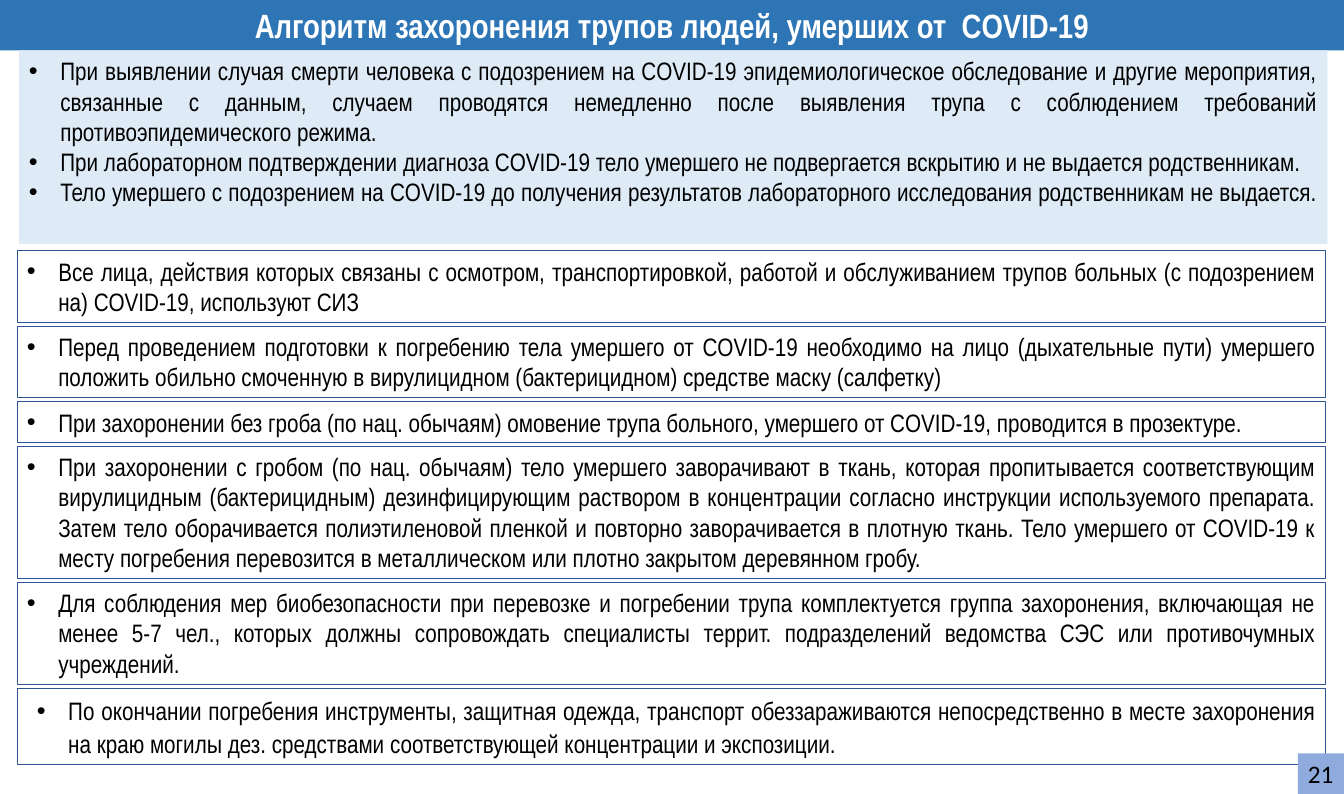
from lxml import etree
from pptx import Presentation
from pptx.dml.color import RGBColor
from pptx.enum.text import MSO_ANCHOR, MSO_AUTO_SIZE, PP_ALIGN
from pptx.oxml.ns import qn
from pptx.util import Cm, Pt

CENTER, JUSTIFY, LEFT = PP_ALIGN.CENTER, PP_ALIGN.JUSTIFY, PP_ALIGN.LEFT
TOP, NO_FIT = MSO_ANCHOR.TOP, MSO_AUTO_SIZE.NONE

WHITE = RGBColor(0xFF, 0xFF, 0xFF)
BLACK = RGBColor(0x00, 0x00, 0x00)
HEADER_BLUE = RGBColor(0x2E, 0x75, 0xB6)
LEAD_BLUE = RGBColor(0xDE, 0xEB, 0xF7)
BORDER_BLUE = RGBColor(0x2F, 0x55, 0x97)
NUMBER_BLUE = RGBColor(0x8F, 0xAA, 0xDC)

FRAME_FORMAT = {
    "auto_size": NO_FIT, "vertical_anchor": TOP, "word_wrap": True,
    "margin_left": Cm(0.25), "margin_right": Cm(0.25),
    "margin_top": Cm(0.13), "margin_bottom": Cm(0.13),
}
HEADER_FONT = {"name": "Arial Narrow", "size": Pt(24), "bold": True}
BODY_FONT = {"name": "Arial Narrow", "size": Pt(18), "bold": False}
NUMBER_FONT = {"name": "Calibri", "size": Pt(18), "bold": False}

HANGING = 0.79
STEP_GAP = 0.1

HEADING = "Алгоритм захоронения трупов людей, умерших от  COVID-19"
LEAD_RULES = [
    "При выявлении случая смерти человека с подозрением на COVID-19 эпидемиологическое обследование "
    "и другие мероприятия, связанные с данным, случаем проводятся немедленно после выявления трупа "
    "с соблюдением требований противоэпидемического режима.",
    "При лабораторном подтверждении диагноза COVID-19 тело умершего не подвергается вскрытию "
    "и не выдается родственникам. ",
    "Тело умершего с подозрением на COVID-19 до получения результатов лабораторного исследования "
    "родственникам не выдается. ",
]
STEPS = [
    (1.8, HANGING, 1.0,
     "Все лица, действия которых связаны с осмотром, транспортировкой, работой и обслуживанием трупов "
     "больных (с подозрением на) COVID-19, используют СИЗ"),
    (1.8, HANGING, 1.0,
     "Перед проведением подготовки к погребению тела умершего от COVID-19 необходимо на лицо "
     "(дыхательные пути) умершего положить обильно смоченную в вирулицидном (бактерицидном) "
     "средстве маску (салфетку)"),
    (1.02, HANGING, 1.0,
     "При захоронении без гроба (по нац. обычаям) омовение трупа больного, умершего от COVID-19, "
     "проводится в прозектуре. "),
    (3.33, HANGING, 1.0,
     "При захоронении с гробом (по нац. обычаям) тело умершего заворачивают в ткань, которая "
     "пропитывается соответствующим вирулицидным (бактерицидным) дезинфицирующим раствором "
     "в концентрации согласно инструкции используемого препарата. Затем тело оборачивается "
     "полиэтиленовой пленкой и повторно заворачивается в плотную ткань. Тело умершего от COVID-19 "
     "к месту погребения перевозится в металлическом или плотно закрытом деревянном гробу. "),
    (2.57, HANGING, 1.0,
     "Для соблюдения мер биобезопасности при перевозке и погребении трупа комплектуется группа "
     "захоронения, включающая не менее 5-7 чел., которых должны сопровождать специалисты террит. "
     "подразделений ведомства СЭС или противочумных учреждений. "),
    (1.91, 1.04, 1.07,
     "По окончании погребения инструменты, защитная одежда, транспорт обеззараживаются "
     "непосредственно в месте захоронения на краю могилы дез. средствами соответствующей "
     "концентрации и экспозиции."),
]


def apply_format(target, values):
    for attribute, value in values.items():
        setattr(target, attribute, value)


def place(region, left, top, width, height):
    apply_format(region, {"left": Cm(left), "top": Cm(top), "width": Cm(width), "height": Cm(height)})


def paint(region, colour):
    region.fill.solid()
    region.fill.fore_color.rgb = colour


def write(region, texts, font, colour, align, spacing=1.0):
    frame = region.text_frame
    apply_format(frame, FRAME_FORMAT)
    frame.text = "\n".join(texts)
    for paragraph in frame.paragraphs:
        apply_format(paragraph, {
            "alignment": align, "line_spacing": spacing, "space_before": Pt(0), "space_after": Pt(0),
        })
        apply_format(paragraph.runs[0].font, font)
        paragraph.runs[0].font.color.rgb = colour


def add_bullets(region, indent):
    for paragraph in region.text_frame.paragraphs:
        properties = paragraph._p.get_or_add_pPr()
        properties.set("marL", str(Cm(indent)))
        properties.set("indent", str(-Cm(HANGING)))
        etree.SubElement(properties, qn("a:buFont"), typeface="Arial")
        etree.SubElement(properties, qn("a:buChar"), char="•")


def fill_header(slide, left, top, width, height):
    header = slide.shapes.title
    place(header, left, top, width, height)
    paint(header, HEADER_BLUE)
    write(header, [HEADING], HEADER_FONT, WHITE, CENTER)


def fill_lead(slide, left, top, width, height):
    lead = slide.placeholders[1]
    place(lead, left, top, width, height)
    paint(lead, LEAD_BLUE)
    write(lead, LEAD_RULES, BODY_FONT, BLACK, JUSTIFY)
    add_bullets(lead, HANGING)


def add_steps(slide, left, top, width):
    for height, indent, spacing, text in STEPS:
        step = slide.shapes.add_textbox(Cm(left), Cm(top), Cm(width), Cm(height))
        step.line.color.rgb = BORDER_BLUE
        step.line.width = Pt(0.75)
        write(step, [text], BODY_FONT, BLACK, JUSTIFY, spacing)
        add_bullets(step, indent)
        top += height + STEP_GAP


def add_page_number(slide, left, top, width, height):
    number = slide.shapes.add_textbox(Cm(left), Cm(top), Cm(width), Cm(height))
    paint(number, NUMBER_BLUE)
    write(number, ["21"], NUMBER_FONT, BLACK, LEFT)
    number.text_frame.word_wrap = False


def main():
    deck = Presentation()
    apply_format(deck, {"slide_width": Cm(33.87), "slide_height": Cm(20)})
    slide = deck.slides.add_slide(deck.slide_layouts[1])
    fill_header(slide, 0, 0, 33.87, 1.27)
    fill_lead(slide, 0.48, 1.27, 32.97, 4.88)
    add_steps(slide, 0.43, 6.32, 32.98)
    add_page_number(slide, 32.71, 18.98, 1.16, 1.02)
    deck.save("out.pptx")


if __name__ == "__main__":
    main()
